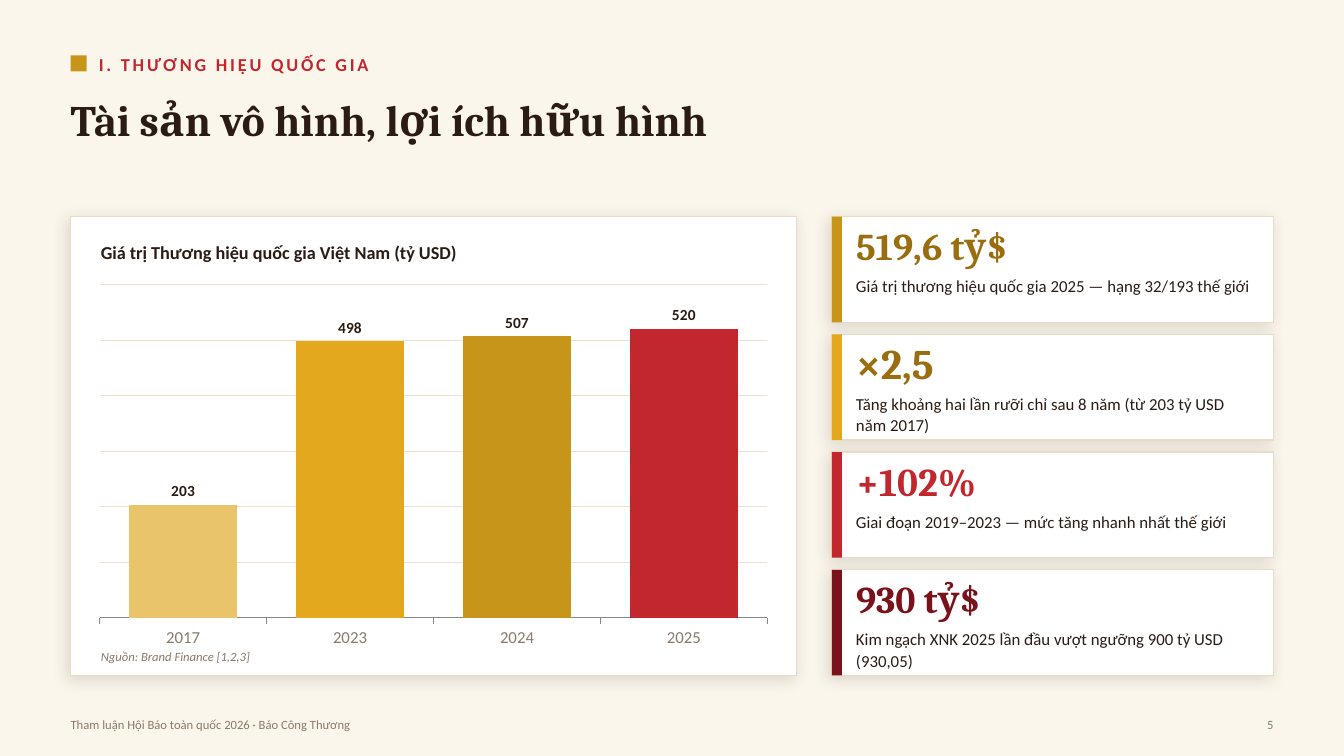
from lxml import etree
from pptx import Presentation
from pptx.chart.data import CategoryChartData
from pptx.dml.color import RGBColor
from pptx.enum.chart import XL_CHART_TYPE, XL_LABEL_POSITION, XL_TICK_LABEL_POSITION, XL_TICK_MARK
from pptx.enum.shapes import MSO_SHAPE
from pptx.enum.text import MSO_ANCHOR, PP_ALIGN
from pptx.oxml import parse_xml
from pptx.oxml.ns import nsdecls, qn
from pptx.util import Inches, Pt

RECT = MSO_SHAPE.RECTANGLE
COLUMN = XL_CHART_TYPE.COLUMN_CLUSTERED
OUTSIDE = XL_LABEL_POSITION.OUTSIDE_END
LOW = XL_TICK_LABEL_POSITION.LOW
TICK_OUT, TICK_NONE = XL_TICK_MARK.OUTSIDE, XL_TICK_MARK.NONE
TOP, MIDDLE = MSO_ANCHOR.TOP, MSO_ANCHOR.MIDDLE
LEFT, RIGHT = PP_ALIGN.LEFT, PP_ALIGN.RIGHT

SANS, SERIF = "Calibri", "Cambria"
COLORS = {
    "cream": "FBF6EC", "white": "FFFFFF", "ink": "2A1C14", "muted": "8A7A68",
    "border": "EADBC4", "grid": "EDE1CE", "axis": "888888", "black": "000000",
    "sand": "E9C46A", "amber": "E3A81E", "gold": "C8951B", "bronze": "9A6E0F",
    "red": "C1272D", "maroon": "7A121B",
}

BRAND_VALUES = [("2017", 203, "sand"), ("2023", 498, "amber"),
                ("2024", 507, "gold"), ("2025", 520, "red")]

# figure, size, figure colour, stripe colour, caption
STATS = [
    ("519,6 tỷ$", 27, "bronze", "gold",
     "Giá trị thương hiệu quốc gia 2025 — hạng 32/193 thế giới"),
    ("×2,5", 30, "bronze", "amber",
     "Tăng khoảng hai lần rưỡi chỉ sau 8 năm (từ 203 tỷ USD năm 2017)"),
    ("+102%", 28, "red", "red",
     "Giai đoạn 2019–2023 — mức tăng nhanh nhất thế giới"),
    ("930 tỷ$", 27, "maroon", "maroon",
     "Kim ngạch XNK 2025 lần đầu vượt ngưỡng 900 tỷ USD (930,05)"),
]


def rgb(name):
    return RGBColor.from_string(COLORS[name])


def style_font(font, size, color, name=SANS, bold=False, italic=False):
    font.size, font.name = Pt(size), name
    font.bold, font.italic = bold, italic
    font.color.rgb = rgb(color)


def add_text(s, text, x, y, w, h, size, color, name=SANS, bold=False, italic=False,
             anchor=MIDDLE, align=LEFT, line_spacing=None, tracking=None):
    tf = s.shapes.add_textbox(Inches(x), Inches(y), Inches(w), Inches(h)).text_frame
    tf.word_wrap = True
    tf.margin_left = tf.margin_right = tf.margin_top = tf.margin_bottom = 0
    tf.vertical_anchor = anchor
    p = tf.paragraphs[0]
    p.alignment = align
    if line_spacing:
        p.line_spacing = line_spacing
    r = p.add_run()
    r.text = text
    style_font(p.font, size, color, name, bold, italic)
    if tracking:
        r._r.get_or_add_rPr().set("spc", str(tracking * 100))


def add_block(s, x, y, w, h, color):
    sp = s.shapes.add_shape(RECT, Inches(x), Inches(y), Inches(w), Inches(h))
    sp.shadow.inherit = False
    sp.fill.solid()
    sp.fill.fore_color.rgb = rgb(color)
    sp.line.fill.background()
    return sp


def add_card(s, x, y, w, h):
    sp = add_block(s, x, y, w, h, "white")
    sp.line.color.rgb = rgb("border")
    sp.line.width = Pt(1)
    # Soft shadow
    effects = sp._element.spPr.find(qn("a:effectLst"))
    shadow = etree.SubElement(effects, qn("a:outerShdw"), blurRad=str(Pt(11)),
                              dist=str(Pt(3)), dir=str(135 * 60000),
                              algn="bl", rotWithShape="0")
    color = etree.SubElement(shadow, qn("a:srgbClr"), val=COLORS["ink"])
    etree.SubElement(color, qn("a:alpha"), val="14000")


def add_header(s, x, y, w):
    add_block(s, x, y + 0.08, 0.16, 0.16, "gold")
    add_text(s, "I. THƯƠNG HIỆU QUỐC GIA", x + 0.28, y, w - 0.3, 0.34,
             13, "red", bold=True, tracking=2)
    add_text(s, "Tài sản vô hình, lợi ích hữu hình", x, y + 0.45, w, 1,
             31, "ink", SERIF, bold=True, anchor=TOP)


def add_brand_chart(s, x, y, w, h):
    data = CategoryChartData()
    data.categories = [year for year, _, _ in BRAND_VALUES]
    data.add_series("Series 1", [value for _, value, _ in BRAND_VALUES])
    chart = s.shapes.add_chart(COLUMN, Inches(x), Inches(y), Inches(w), Inches(h), data).chart
    chart.has_legend = chart.has_title = False
    style_font(chart.font, 10, "black")
    chart._chartSpace.chart.addnext(parse_xml(
        f'<c:spPr {nsdecls("c", "a")}><a:solidFill><a:srgbClr val="{COLORS["white"]}"/>'
        '</a:solidFill><a:ln><a:noFill/></a:ln></c:spPr>'))

    # Axes
    years = chart.category_axis
    years.tick_label_position = LOW
    years.major_tick_mark, years.minor_tick_mark = TICK_OUT, TICK_NONE
    years.has_major_gridlines = False
    years.format.line.color.rgb = rgb("axis")
    years.format.line.width = Pt(1)
    style_font(years.tick_labels.font, 12, "muted")
    values = chart.value_axis
    values.visible = False
    values.minimum_scale, values.maximum_scale, values.major_unit = 0, 600, 100
    values.has_major_gridlines = True
    values.major_gridlines.format.line.color.rgb = rgb("grid")
    values.major_gridlines.format.line.width = Pt(0.5)

    # Columns and their labels
    plot = chart.plots[0]
    plot.gap_width = 55
    plot.vary_by_categories = False
    series = plot.series[0]
    series.invert_if_negative = False
    for i, (_, _, color) in enumerate(BRAND_VALUES):
        fill = (series.points[i] if i else series).format.fill
        fill.solid()
        fill.fore_color.rgb = rgb(color)
    labels = series.data_labels
    labels.show_value = True
    labels.number_format, labels.number_format_is_linked = "#,##0", False
    labels.position = OUTSIDE
    style_font(labels.font, 11, "ink", bold=True)


def add_chart_panel(s, x, y, w, h):
    add_card(s, x, y, w, h)
    add_text(s, "Giá trị Thương hiệu quốc gia Việt Nam (tỷ USD)",
             x + 0.3, y + 0.15, w - 0.6, 0.4, 13, "ink", bold=True)
    add_brand_chart(s, x + 0.15, y + 0.6, w - 0.3, h - 0.8)
    add_text(s, "Nguồn: Brand Finance [1,2,3]",
             x + 0.3, y + h - 0.34, w - 0.6, 0.3, 9, "muted", italic=True)


def add_stat_cards(s, x, y, w, h, gap=0.12):
    card_h = (h - gap * (len(STATS) - 1)) / len(STATS)
    for i, (figure, size, color, stripe, caption) in enumerate(STATS):
        top = y + i * (card_h + gap)
        add_card(s, x, top, w, card_h)
        add_block(s, x, top, 0.1, card_h, stripe)
        # The figure's box ends above the caption
        add_text(s, figure, x + 0.24, top + 0.02, w - 0.4, card_h / 2,
                 size, color, SERIF, bold=True)
        add_text(s, caption, x + 0.24, top + 0.58, w - 0.42, 0.44,
                 12, "ink", anchor=TOP, line_spacing=1.05)


def add_footer(s, x, y, w):
    add_text(s, "Tham luận Hội Báo toàn quốc 2026 · Báo Công Thương",
             x, y, 9, 0.3, 9, "muted")
    add_text(s, "5", x + w - 0.6, y, 0.6, 0.3, 9, "muted", align=RIGHT)


def main():
    prs = Presentation()
    prs.slide_width, prs.slide_height = Inches(13.33), Inches(7.5)
    s = prs.slides.add_slide(prs.slide_layouts[6])
    s.background.fill.solid()
    s.background.fill.fore_color.rgb = rgb("cream")
    add_header(s, 0.7, 0.47, 11.93)
    add_chart_panel(s, 0.7, 2.15, 7.2, 4.55)
    add_stat_cards(s, 8.25, 2.15, 4.38, 4.55)
    add_footer(s, 0.7, 7.04, 11.93)
    prs.save("out.pptx")


if __name__ == "__main__":
    main()
